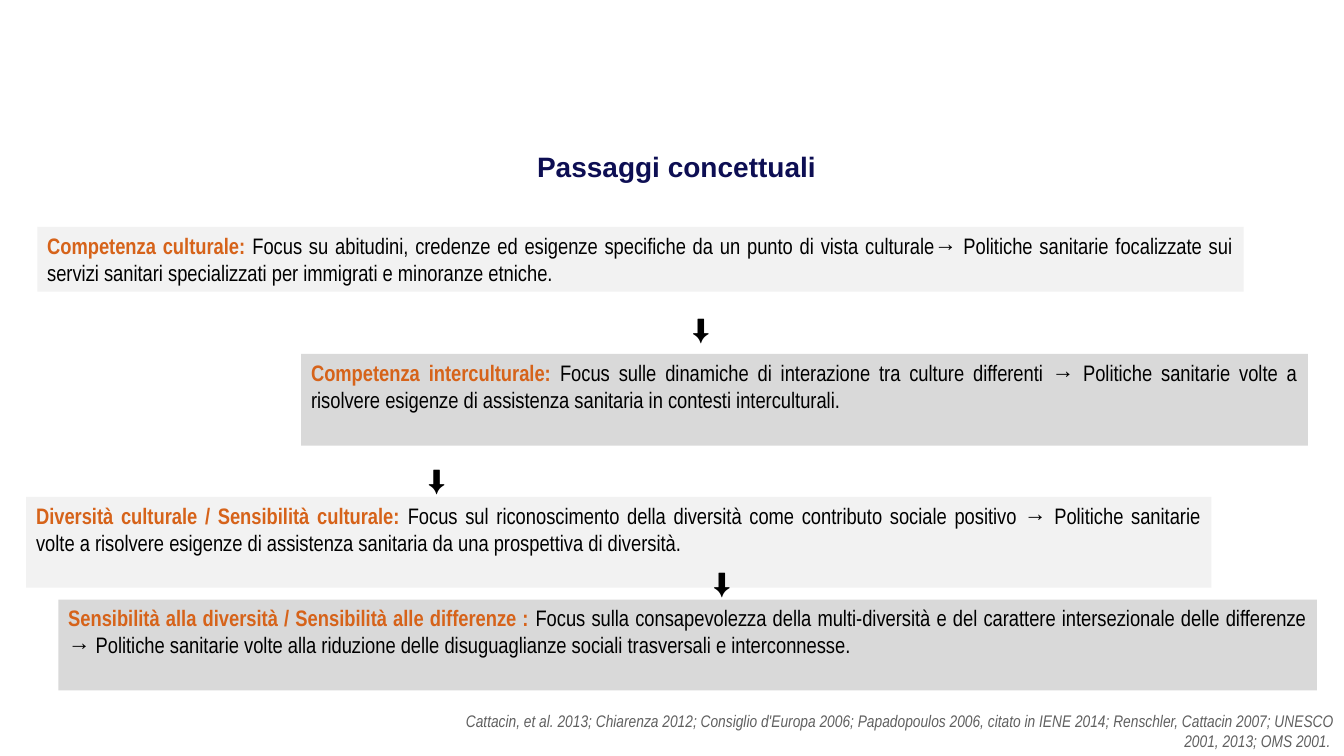
from pptx import Presentation
from pptx.dml.color import RGBColor
from pptx.enum import shapes, text
from pptx.util import Cm, Pt

NAVY = RGBColor(0x0D, 0x0E, 0x53)
ORANGE = RGBColor(0xD6, 0x63, 0x1A)
BLACK = RGBColor(0, 0, 0)
GREY = RGBColor(0x60, 0x60, 0x60)
LIGHT = RGBColor(0xF2, 0xF2, 0xF2)
DARK = RGBColor(0xD9, 0xD9, 0xD9)

TITLE = "Passaggi concettuali"
STEPS = [
    ("Competenza culturale: ",
     "Focus su abitudini, credenze ed esigenze specifiche da un punto di vista culturale→ "
     "Politiche sanitarie focalizzate sui servizi sanitari specializzati per immigrati e "
     "minoranze etniche. ",
     (0.94, 5.72, 30.4, 1.63)),
    ("Competenza interculturale: ",
     "Focus sulle dinamiche di interazione tra culture differenti → Politiche sanitarie "
     "volte a risolvere esigenze di assistenza sanitaria in contesti interculturali. ",
     (7.59, 8.92, 25.37, 2.31)),
    ("Diversità culturale / Sensibilità culturale: ",
     "Focus sul riconoscimento della diversità come contributo sociale positivo → "
     "Politiche sanitarie volte a risolvere esigenze di assistenza sanitaria da una "
     "prospettiva di diversità.",
     (0.66, 12.52, 29.87, 2.29)),
    ("Sensibilità alla diversità / Sensibilità alle differenze : ",
     "Focus sulla consapevolezza della multi-diversità e del carattere intersezionale "
     "delle differenze → Politiche sanitarie volte alla riduzione delle disuguaglianze "
     "sociali trasversali e interconnesse. ",
     (1.47, 15.11, 31.72, 2.29)),
]
ARROWS = [(17.2, 7.72), (10.54, 11.53), (17.73, 14.12)]
SOURCE = ("Cattacin, et al. 2013; Chiarenza 2012; Consiglio d'Europa 2006; Papadopoulos 2006, "
          "citato in IENE 2014; Renschler, Cattacin 2007; UNESCO 2001, 2013; OMS 2001. ")


def lengths(*nums):
    return [Cm(n) for n in nums]


def style(shape, size, face, color, align, wrap=True):
    frame = shape.text_frame
    frame.word_wrap = wrap
    frame.auto_size = text.MSO_AUTO_SIZE.NONE
    frame.vertical_anchor = text.MSO_ANCHOR.TOP
    para = frame.paragraphs[0]
    para.alignment = align
    font = para.font
    font.size, font.name = Pt(size), face
    font.color.rgb = color
    return para


def add_step(slide, head, body, box, fill):
    shape = slide.shapes.add_shape(shapes.MSO_SHAPE.RECTANGLE, *lengths(*box))
    shape.shadow.inherit = False
    shape.fill.solid()
    shape.fill.fore_color.rgb = fill
    shape.line.fill.background()
    para = style(shape, 16, "Arial Narrow", BLACK, text.PP_ALIGN.JUSTIFY)
    for part, color, bold in ((head, ORANGE, True), (body, BLACK, False)):
        run = para.add_run()
        run.text = part
        run.font.bold = bold
        run.font.color.rgb = color


def add_label(slide, words, box):
    shape = slide.shapes.add_textbox(*lengths(*box))
    shape.text_frame.text = words
    return shape


def main():
    deck = Presentation()
    deck.slide_width, deck.slide_height = lengths(33.87, 19.05)
    slide = deck.slides.add_slide(deck.slide_layouts[5])

    title = slide.shapes.title
    title.left, title.top, title.width, title.height = lengths(1.19, 3.63, 31.72, 1.09)
    title.text_frame.text = TITLE
    style(title, 20, "Arial", NAVY, text.PP_ALIGN.CENTER).font.bold = True

    for i, (head, body, box) in enumerate(STEPS):
        add_step(slide, head, body, box, (LIGHT, DARK)[i % 2])

    for left, top in ARROWS:
        arrow = add_label(slide, "⬇", (left, top, 1.52, 1.12))
        style(arrow, 20, "Arial", BLACK, text.PP_ALIGN.LEFT, False)

    source = add_label(slide, SOURCE, (10.54, 17.78, 23.34, 1.27))
    style(source, 12, "Arial Narrow", GREY, text.PP_ALIGN.RIGHT).font.italic = True

    deck.save("out.pptx")


if __name__ == "__main__":
    main()
